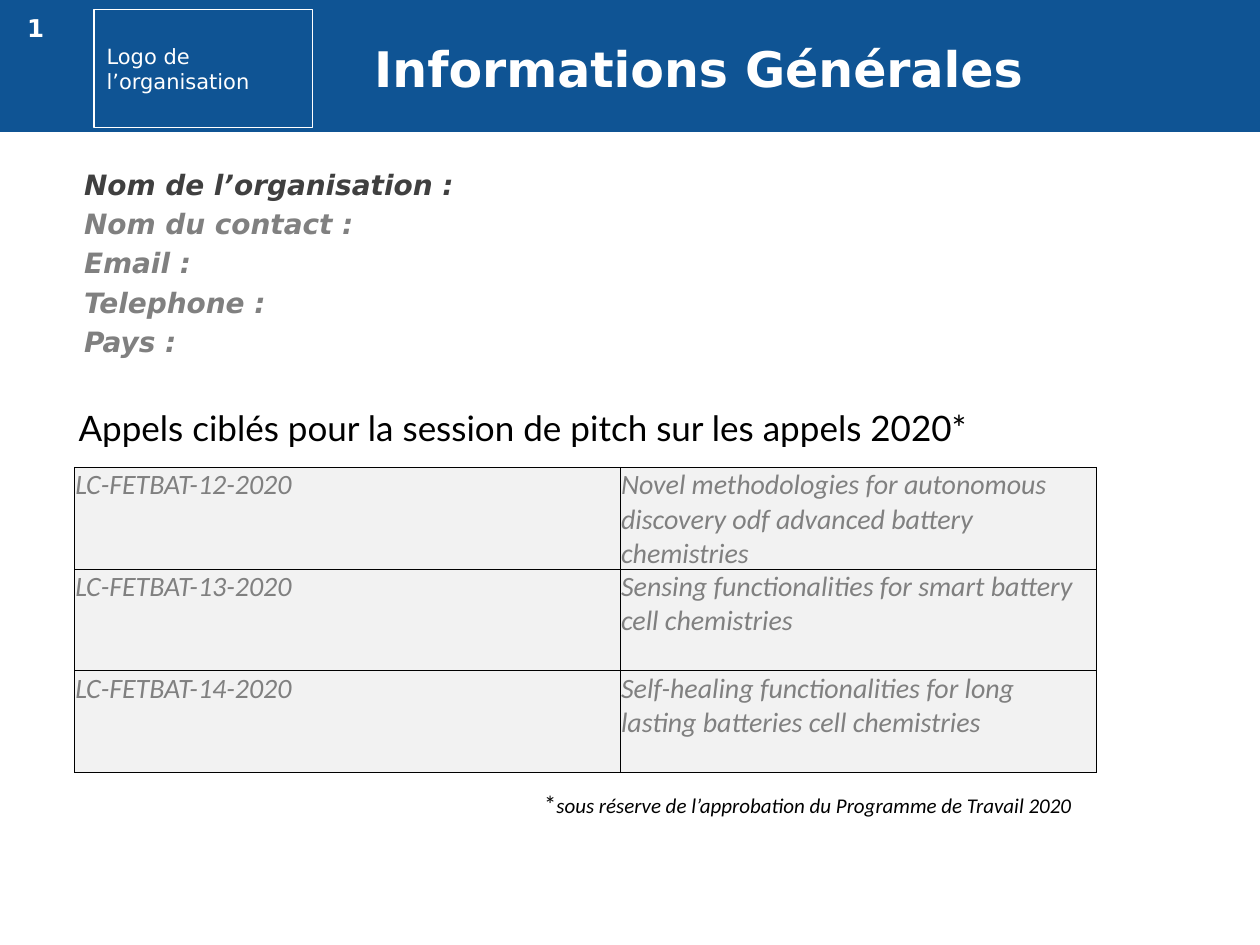
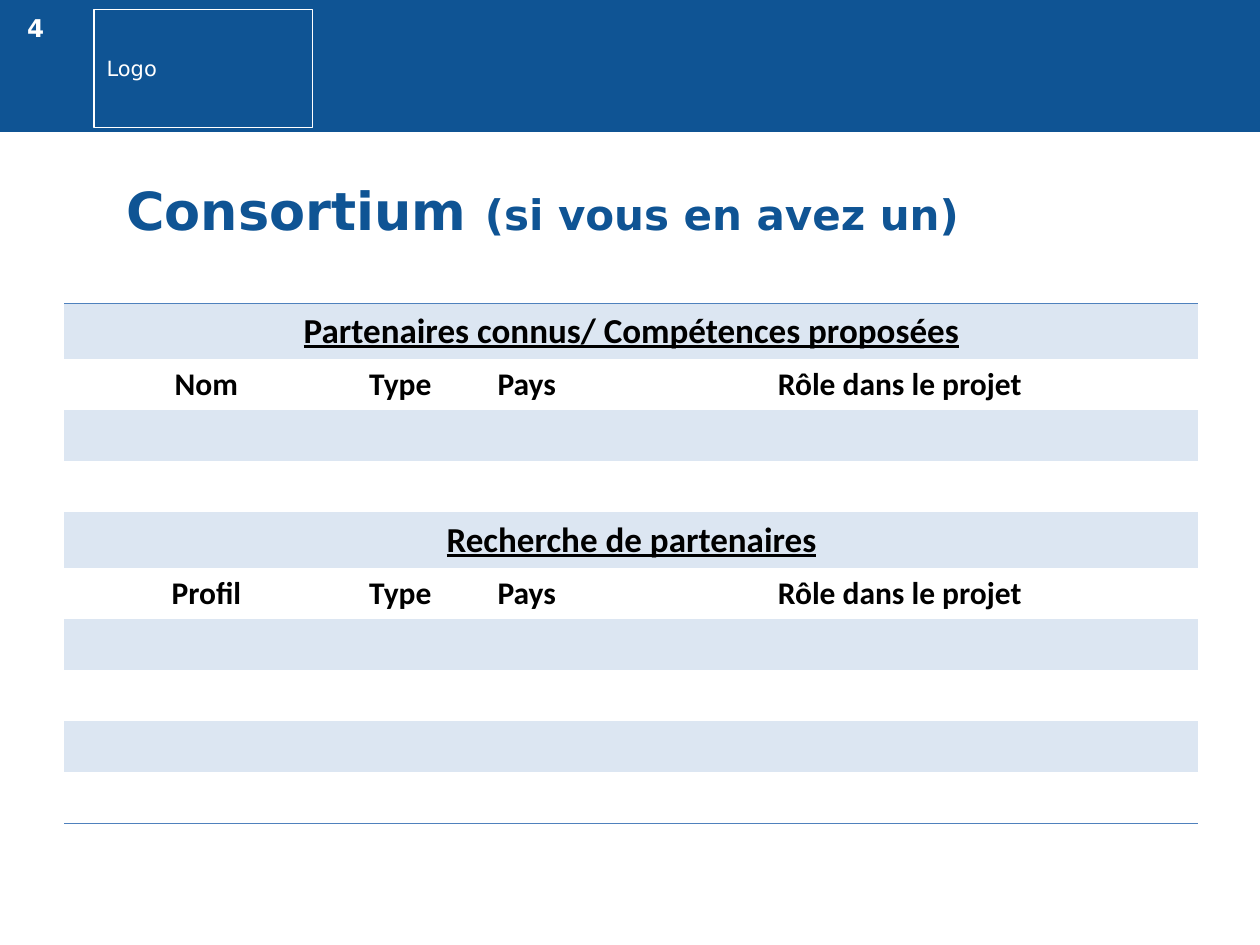
from dataclasses import dataclass

from lxml.etree import SubElement
from pptx import Presentation
from pptx.dml.color import RGBColor as Rgb
from pptx.enum.shapes import MSO_SHAPE as Shape
from pptx.enum.text import MSO_ANCHOR as Anchor, MSO_AUTO_SIZE as AutoSize, PP_ALIGN as Align
from pptx.oxml.ns import qn
from pptx.util import Cm, Pt


@dataclass(frozen=True)
class Theme:
    # Colours
    blue: str = "0F5494"
    accent: str = "4F81BD"
    stripe: str = "DCE6F2"
    white: str = "FFFFFF"
    black: str = "000000"
    dark: str = "404040"
    grey: str = "808080"
    pale: str = "F2F2F2"
    # Fonts
    display: str = "DejaVu Sans"
    heading: str = "Lato"
    text: str = "Calibri"
    # Type sizes
    consortium: int = 30
    title: int = 28
    subtitle: int = 24
    section: int = 20
    column: int = 18
    body: int = 16
    number: int = 14
    small: int = 12


THEME = Theme()
PLAIN_TABLE = "{2D5ABB26-0587-4C30-8999-92F81FD0307C}"

CONTACT_FIELDS = ["Nom de l’organisation :", "Nom du contact :", "Email :", "Telephone :", "Pays :"]
CALLS = [
    ("LC-FETBAT-12-2020",
     "Novel methodologies for autonomous discovery odf advanced battery chemistries"),
    ("LC-FETBAT-13-2020", "Sensing functionalities for smart battery cell chemistries"),
    ("LC-FETBAT-14-2020", "Self-healing functionalities for long lasting batteries cell chemistries"),
]
SHARED_COLUMNS = ["Type", "Pays", "Rôle dans le projet"]
CONSORTIUM_ROWS = [
    ["Partenaires connus/ Compétences proposées"],
    ["Nom", *SHARED_COLUMNS],
    [], [],
    ["Recherche de partenaires"],
    ["Profil", *SHARED_COLUMNS],
    [], [], [], [],
]


# Text and placement helpers
def add_run(paragraph, words, size, color, font=THEME.display,
            bold=False, italic=False, underline=False):
    run = paragraph.add_run()
    run.text = words
    style = run.font
    style.name, style.size = font, Pt(size)
    style.bold, style.italic, style.underline = bold, italic, underline
    style.color.rgb = Rgb.from_string(color)


def place(part, left, top, width, height):
    part.left, part.top, part.width, part.height = map(Cm, (left, top, width, height))


def add_label(slide, box, wrap=False):
    label = slide.shapes.add_textbox(*map(Cm, box)).text_frame
    label.word_wrap = wrap
    return label.paragraphs[0]


def set_title(slide, box, pieces, color):
    title = slide.shapes.title
    place(title, *box)
    frame = title.text_frame
    frame.auto_size = AutoSize.NONE
    frame.vertical_anchor = Anchor.MIDDLE
    frame.paragraphs[0].alignment = Align.LEFT
    for words, size in pieces:
        add_run(frame.paragraphs[0], words, size, color, bold=True)


# Header shared by all slides
def add_master_band(prs, slide):
    band = slide.shapes.add_shape(Shape.RECTANGLE, 0, 0, prs.slide_width, Cm(2.66))
    band.shadow.inherit = False
    band.fill.solid()
    band.fill.fore_color.rgb = band.line.color.rgb = Rgb.from_string(THEME.blue)
    band.line.width = Pt(0.75)
    prs.slide_master.shapes._spTree.insert(2, band._element)


def add_header(slide, number, logo_text):
    page = add_label(slide, (0.3, 0.13, 1.6, 0.86), wrap=True)
    add_run(page, number, THEME.number, THEME.white, bold=True)

    logo = slide.shapes.add_shape(Shape.RECTANGLE, *map(Cm, (1.9, 0.19, 4.4, 2.38)))
    logo.shadow.inherit = False
    logo.fill.background()
    logo.line.color.rgb = Rgb.from_string(THEME.white)
    logo.line.width = Pt(1)
    logo.text_frame.vertical_anchor = Anchor.MIDDLE
    caption = logo.text_frame.paragraphs[0]
    caption.alignment = Align.LEFT
    add_run(caption, logo_text, THEME.small, THEME.white)


# Tables
def add_plain_table(slide, left, top, widths, heights):
    table = slide.shapes.add_table(
        len(heights), len(widths), Cm(left), Cm(top), Cm(sum(widths)), Cm(sum(heights))).table
    table.first_row = table.horz_banding = False
    table._tbl.tblPr.find(qn("a:tableStyleId")).text = PLAIN_TABLE
    for column, width in zip(table.columns, widths):
        column.width = Cm(width)
    for row, height in zip(table.rows, heights):
        row.height = Cm(height)
    return table


def fill_cell(cell, color):
    cell.fill.solid()
    cell.fill.fore_color.rgb = Rgb.from_string(color)


def set_borders(cell, sides, color, width):
    """Draw the given sides, listed in the order L, R, T, B."""
    properties = cell._tc.get_or_add_tcPr()
    for position, side in enumerate(sides):
        border = SubElement(properties, qn(f"a:ln{side}"), w=str(Pt(width)))
        paint = SubElement(border, qn("a:solidFill"))
        SubElement(paint, qn("a:srgbClr"), val=color)
        properties.insert(position, border)


def add_calls_table(slide):
    table = add_plain_table(slide, 1.5, 9.42, [11, 9.6], [2.05] * len(CALLS))
    for row, call in zip(table.rows, CALLS):
        for cell, words in zip(row.cells, call):
            cell.margin_left = cell.margin_right = cell.margin_top = Cm(0.02)
            cell.margin_bottom = 0
            fill_cell(cell, THEME.pale)
            set_borders(cell, "LRTB", THEME.black, 0.5)
            add_run(cell.text_frame.paragraphs[0], words, THEME.body, THEME.grey,
                    THEME.text, italic=True)


def add_consortium_table(slide):
    heights = [1.12 if len(words) == 1 else 1.03 for words in CONSORTIUM_ROWS]
    table = add_plain_table(slide, 1.3, 6.12, [5.72, 2.1, 3, 12.04], heights)
    last = len(CONSORTIUM_ROWS) - 1
    for index, (row, words) in enumerate(zip(table.rows, CONSORTIUM_ROWS)):
        cells = list(row.cells)
        is_section = len(words) == 1
        for cell in cells:
            if index % 2 == 0:
                fill_cell(cell, THEME.stripe)
            else:
                cell.fill.background()
            if index in (0, last):
                set_borders(cell, "T" if index == 0 else "B", THEME.accent, 1)
        if is_section:
            cells[0].merge(cells[-1])
        for cell, label in zip(cells, words):
            paragraph = cell.text_frame.paragraphs[0]
            paragraph.alignment = Align.CENTER
            add_run(paragraph, label, THEME.section if is_section else THEME.column,
                    THEME.black, THEME.text, bold=True, underline=is_section)


# Contact list
def add_contact_list(slide):
    contact = slide.placeholders[1]
    place(contact, 0.48, 3.25, 13.6, 4.4)
    frame = contact.text_frame
    frame.auto_size = AutoSize.NONE
    for index, field in enumerate(CONTACT_FIELDS):
        paragraph = frame.add_paragraph() if index else frame.paragraphs[0]
        properties = paragraph._p.get_or_add_pPr()
        properties.set("marL", str(Cm(0.96)))
        properties.set("indent", str(-Cm(0.96)))
        bullet_color = SubElement(properties, qn("a:buClr"))
        SubElement(bullet_color, qn("a:srgbClr"), val=THEME.white)
        SubElement(properties, qn("a:buChar"), char="•")
        add_run(paragraph, field, THEME.body, THEME.grey if index else THEME.dark,
                bold=True, italic=True)


# Slides
def build_general_information(prs):
    slide = prs.slides.add_slide(prs.slide_layouts[1])
    add_master_band(prs, slide)
    add_contact_list(slide)
    set_title(slide, (7.29, 0, 18.11, 2.72), [("Informations Générales", THEME.title)],
              THEME.white)

    calls_heading = add_label(slide, (1.17, 8.08, 18.75, 1.12))
    calls_heading.alignment = Align.CENTER
    add_run(calls_heading, "Appels ciblés pour la session de pitch sur les appels 2020*",
            THEME.section, THEME.black, THEME.heading)
    add_calls_table(slide)
    add_header(slide, "1", "Logo de l’organisation")

    footnote = add_label(slide, (10.72, 15.7, 11.25, 0.91))
    footnote.line_spacing, footnote.space_after = 1.15, Pt(10)
    add_run(footnote, "*", THEME.number, THEME.black, THEME.text)
    add_run(footnote, "sous réserve de l’approbation du Programme de Travail 2020",
            THEME.small, THEME.black, THEME.text, italic=True)


def build_consortium(prs):
    slide = prs.slides.add_slide(prs.slide_layouts[5])
    set_title(slide, (2.29, 2.92, 22.86, 2.59),
              [("Consortium ", THEME.consortium), ("(si vous en avez un)", THEME.subtitle)],
              THEME.blue)
    add_header(slide, "4", "Logo")
    add_consortium_table(slide)


def main():
    prs = Presentation()
    prs.slide_width, prs.slide_height = Cm(25.4), Cm(19.05)
    build_general_information(prs)
    build_consortium(prs)
    prs.save("out.pptx")


if __name__ == "__main__":
    main()
